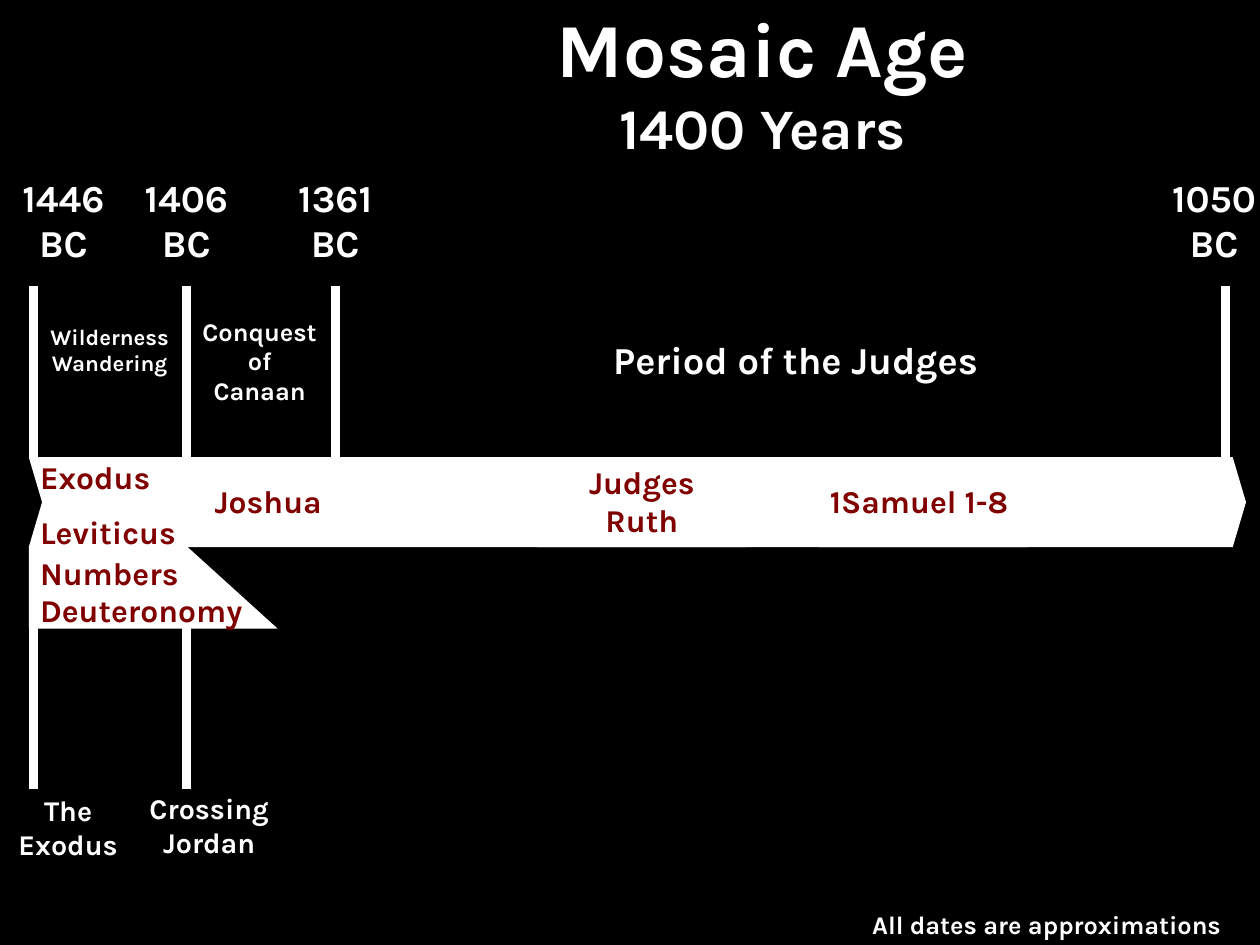
import pptx
import pptx.util
import pptx.dml.color
import pptx.enum.shapes
import pptx.enum.text
import pptx.oxml
from dataclasses import dataclass

Cm, Pt = pptx.util.Cm, pptx.util.Pt
RGB = pptx.dml.color.RGBColor
SHAPE = pptx.enum.shapes.MSO_SHAPE
ALIGN = pptx.enum.text.PP_ALIGN
ANCHOR = pptx.enum.text.MSO_ANCHOR


@dataclass(frozen=True)
class Theme:
    font: str = "Karla"
    back: RGB = RGB(0, 0, 0)
    light: RGB = RGB(255, 255, 255)
    book: RGB = RGB(128, 0, 0)
    title: int = 48
    subtitle: int = 36
    date: int = 24
    books: int = 20
    event: int = 18
    small: int = 16
    tiny: int = 14
    rule: float = 5.75
    spacing: float = 0.98


T = Theme()


# Shared helpers
def write(sp, lines, sizes, color=T.light, align=ALIGN.CENTER, anchor=ANCHOR.TOP):
    tf = sp.text_frame
    frame = dict(word_wrap=False, auto_size=pptx.enum.text.MSO_AUTO_SIZE.NONE,
                 vertical_anchor=anchor, margin_left=Cm(0.25), margin_right=Cm(0.25),
                 margin_top=Cm(0.13), margin_bottom=Cm(0.13))
    for name, value in frame.items():
        setattr(tf, name, value)
    for i, line in enumerate(lines):
        p = tf.paragraphs[0] if i == 0 else tf.add_paragraph()
        p.alignment, p.line_spacing = align, T.spacing
        r = p.add_run()
        r.text = line
        size = sizes[i] if isinstance(sizes, tuple) else sizes
        for name, value in dict(name=T.font, size=Pt(size), bold=True).items():
            setattr(r.font, name, value)
        r.font.color.rgb = color


def label(s, box, lines, size, **style):
    sp = s.shapes.add_textbox(*map(Cm, box))
    write(sp, lines, size, **style)


def block(s, kind, box):
    sp = s.shapes.add_shape(kind, *map(Cm, box))
    sp.shadow.inherit = False
    sp.fill.solid()
    sp.fill.fore_color.rgb = T.light
    sp.line.fill.background()
    return sp


def post(s, x, top, height):
    c = s.shapes.add_connector(pptx.enum.shapes.MSO_CONNECTOR.STRAIGHT,
                               Cm(x), Cm(top + height), Cm(x), Cm(top))
    c.line.color.rgb = T.light
    c.line.width = Pt(T.rule)
    c._element.spPr.append(pptx.oxml.parse_xml(
        '<a:effectLst xmlns:a="http://schemas.openxmlformats.org/drawingml/2006/main"/>'))


# Regions
def add_title(s, x, y, w, h):
    sp = s.shapes.title
    for name, value in dict(left=x, top=y, width=w, height=h).items():
        setattr(sp, name, Cm(value))
    write(sp, ["Mosaic Age", "1400 Years"], (T.title, T.subtitle))


def add_dates(s, x, y, w, h):
    """Dated posts that stand on the band, with the periods between them."""
    post_h, date_w = 3.81, 2.84
    post_top = y + h - post_h
    # year, post offset, centre of the date
    for year, dx, mid in [("1446", 0.1, 0.77), ("1406", 3.5, 3.5),
                          ("1361", 6.81, 6.81), ("1050", 26.59, 26.34)]:
        post(s, x + dx, post_top, post_h)
        label(s, (x + mid - date_w / 2, y, date_w, 2.24), [year, "BC"], T.date)
    # offset from the left, offset below the post tops, width, height
    for dx, dy, pw, ph, lines, size in [
            (0, 0.74, 3.6, 1.42, ["Wilderness", "Wandering"], T.tiny),
            (3.38, 0.57, 3.5, 2.21, ["Conquest", "of", "Canaan"], T.small),
            (11.94, 1.05, 10.2, 1.24, ["Period of the Judges"], T.date)]:
        label(s, (x + dx, post_top + dy, pw, ph), lines, size)


def add_band(s, x, y, w, h):
    """The time arrow, its lower extension and the books written on them."""
    block(s, SHAPE.CHEVRON, (x, y, w, h)).adjustments[0] = 0.148
    block(s, SHAPE.RECTANGLE, (x, y + 1.98, 3.5, 1.83))
    block(s, SHAPE.RIGHT_TRIANGLE, (x + 3.4, y + 1.88, 2.13, 1.93))
    for dx, lines, align in [(11.3, ["Judges", "Ruth"], ALIGN.CENTER),
                             (17.55, ["1Samuel 1-8"], ALIGN.LEFT)]:
        sp = block(s, SHAPE.RECTANGLE, (x + dx, y, 4.65, h))
        write(sp, lines, T.books, T.book, align, ANCHOR.MIDDLE)
    for dx, dy, bw, bh, lines in [
            (3.88, 0.45, 3.15, 1.07, ["Joshua"]),
            (0, -0.08, 3.35, 1.07, ["Exodus"]),
            (0, 1.14, 4.06, 1.07, ["Leviticus"]),
            (0, 2.06, 4.93, 1.88, ["Numbers", "Deuteronomy"])]:
        label(s, (x + dx, y + dy, bw, bh), lines, T.books,
              color=T.book, align=ALIGN.LEFT)


def add_events(s, x, y, w, h):
    """Posts below the band, each with its event at the foot."""
    post_h = 3.81
    for dx, left, ew, dy, lines in [
            (0.1, -0.66, 3.07, 0, ["The", "Exodus"]),
            (3.5, 2.22, 3.58, -0.04, ["Crossing", "Jordan"])]:
        post(s, x + dx, y, post_h)
        label(s, (x + left, y + post_h + dy, ew, h - post_h), lines, T.event)


def add_footnote(s, x, y, w, h):
    label(s, (x, y, w, h), ["All dates are approximations"], T.small)


def main():
    prs = pptx.Presentation()
    prs.slide_width, prs.slide_height = Cm(28), Cm(21)
    s = prs.slides.add_slide(prs.slide_layouts[5])
    s.background.fill.solid()
    s.background.fill.fore_color.rgb = T.back

    left, band_top, band_w = 0.64, 10.16, 27.05
    add_title(s, 11.27, 0, 11.35, 3.7)
    add_dates(s, left, 3.8, band_w, band_top - 3.8)
    # The band goes over the tops of the event posts, so its books stay clear
    add_events(s, left, 13.72, 6, 5.54)
    add_band(s, left, band_top, band_w, 2)
    add_footnote(s, 18.42, 20.1, 9.68, 0.9)
    prs.save("out.pptx")


if __name__ == "__main__":
    main()
